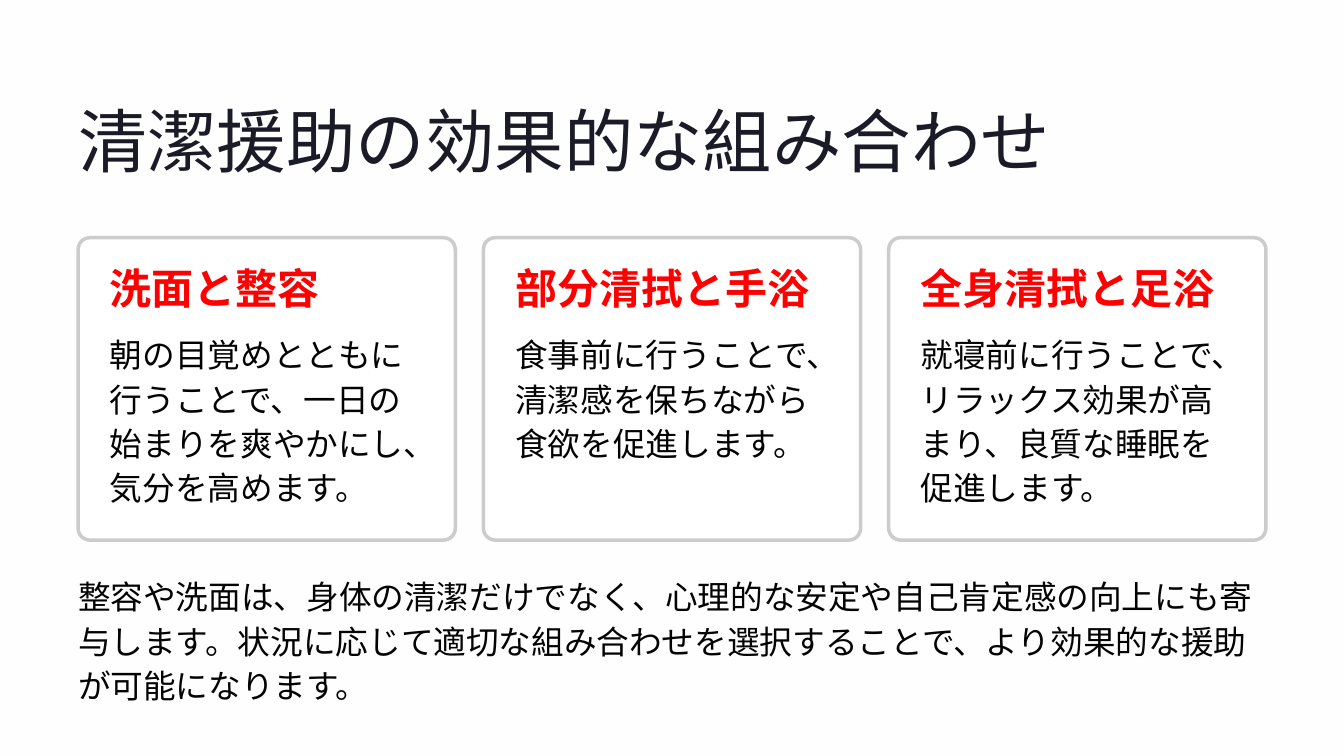
from dataclasses import dataclass

from lxml.etree import SubElement
from pptx import Presentation
from pptx.dml.color import RGBColor
from pptx.enum.shapes import MSO_SHAPE
from pptx.enum.text import MSO_ANCHOR, MSO_AUTO_SIZE, PP_ALIGN
from pptx.oxml.ns import qn
from pptx.shapes.base import BaseShape
from pptx.slide import Slide
from pptx.util import Inches, Pt

COLOURS = {
    "page": "FEFEFE",
    "card": "FFFFFF",
    "border": "CCCCCC",
    "title": "1B1B27",
    "heading": "FF0000",
    "body": "030303",
}

# Layout in inches
MARGIN = 0.93
CONTENT_WIDTH = 14.14
CARD_TOP, CARD_WIDTH, CARD_HEIGHT = 2.83, 4.49, 3.6
CARD_PADDING = 0.38


@dataclass(frozen=True)
class TextStyle:
    font: str
    size: float
    line: float
    colour: str
    bold: bool = False
    wrap: bool = True


@dataclass(frozen=True)
class Card:
    heading: str
    text: str


TITLE = TextStyle("Inter", 59.5, 74.5, "title", wrap=False)
HEADING = TextStyle("Inter", 36, 37, "heading", bold=True, wrap=False)
BODY = TextStyle("Cabin", 28, 38, "body")

CARDS = [
    Card("洗面と整容", "朝の目覚めとともに行うことで、一日の始まりを爽やかにし、気分を高めます。"),
    Card("部分清拭と手浴", "食事前に行うことで、清潔感を保ちながら食欲を促進します。"),
    Card("全身清拭と足浴", "就寝前に行うことで、リラックス効果が高まり、良質な睡眠を促進します。"),
]
CLOSING = (
    "整容や洗面は、身体の清潔だけでなく、心理的な安定や自己肯定感の向上にも寄与します。"
    "状況に応じて適切な組み合わせを選択することで、より効果的な援助が可能になります。"
)


def colour(name: str) -> RGBColor:
    return RGBColor.from_string(COLOURS[name])


def place(box: BaseShape, left: float, top: float, width: float, height: float) -> None:
    box.left, box.top = Inches(left), Inches(top)
    box.width, box.height = Inches(width), Inches(height)


def write(box: BaseShape, text: str, style: TextStyle) -> None:
    frame = box.text_frame
    frame.text = text
    frame.auto_size = MSO_AUTO_SIZE.NONE
    frame.word_wrap = style.wrap
    frame.vertical_anchor = MSO_ANCHOR.TOP
    frame.margin_left = frame.margin_right = frame.margin_top = frame.margin_bottom = 0
    para = frame.paragraphs[0]
    para.alignment = PP_ALIGN.LEFT
    para.line_spacing = Pt(style.line)
    para.space_before = Pt(0)
    para.font.name = style.font
    para.font.size = Pt(style.size)
    para.font.bold = style.bold
    para.font.color.rgb = colour(style.colour)


def remove_bullet(box: BaseShape) -> None:
    properties = box.text_frame.paragraphs[0]._p.get_or_add_pPr()
    properties.set("marL", "0")
    properties.set("indent", "0")
    bullet = SubElement(properties, qn("a:buNone"))
    properties.find(qn("a:defRPr")).addprevious(bullet)


def add_text(page: Slide, text: str, style: TextStyle,
             left: float, top: float, width: float, height: float) -> None:
    box = page.shapes.add_textbox(Inches(left), Inches(top), Inches(width), Inches(height))
    write(box, text, style)


def add_card(page: Slide, card: Card, left: float) -> None:
    panel = page.shapes.add_shape(
        MSO_SHAPE.ROUNDED_RECTANGLE, Inches(left), Inches(CARD_TOP),
        Inches(CARD_WIDTH), Inches(CARD_HEIGHT))
    panel.adjustments[0] = 0.039
    panel.shadow.inherit = False
    panel.fill.solid()
    panel.fill.fore_color.rgb = colour("card")
    panel.line.color.rgb = colour("border")
    panel.line.width = Pt(3)

    text_left = left + CARD_PADDING
    text_width = CARD_WIDTH - 2 * CARD_PADDING
    heading_top = CARD_TOP + CARD_PADDING
    add_text(page, card.heading, HEADING, text_left, heading_top, text_width, 0.52)
    add_text(page, card.text, BODY, text_left, heading_top + 0.72, text_width, 2.13)


def main() -> None:
    deck = Presentation()
    deck.slide_width, deck.slide_height = Inches(16), Inches(9)
    page = deck.slides.add_slide(deck.slide_layouts[1])
    page.background.fill.solid()
    page.background.fill.fore_color.rgb = colour("page")

    # Title
    title = page.shapes.title
    place(title, MARGIN, 1.13, 11.65, 1.04)
    write(title, "清潔援助の効果的な組み合わせ", TITLE)

    # Three cards spread evenly across the content width
    step = (CONTENT_WIDTH - CARD_WIDTH) / (len(CARDS) - 1)
    for index, card in enumerate(CARDS):
        add_card(page, card, MARGIN + index * step)

    # Closing paragraph
    closing = page.placeholders[1]
    place(closing, MARGIN, 6.81, CONTENT_WIDTH, 1.6)
    write(closing, CLOSING, BODY)
    remove_bullet(closing)

    deck.save("out.pptx")


if __name__ == "__main__":
    main()
